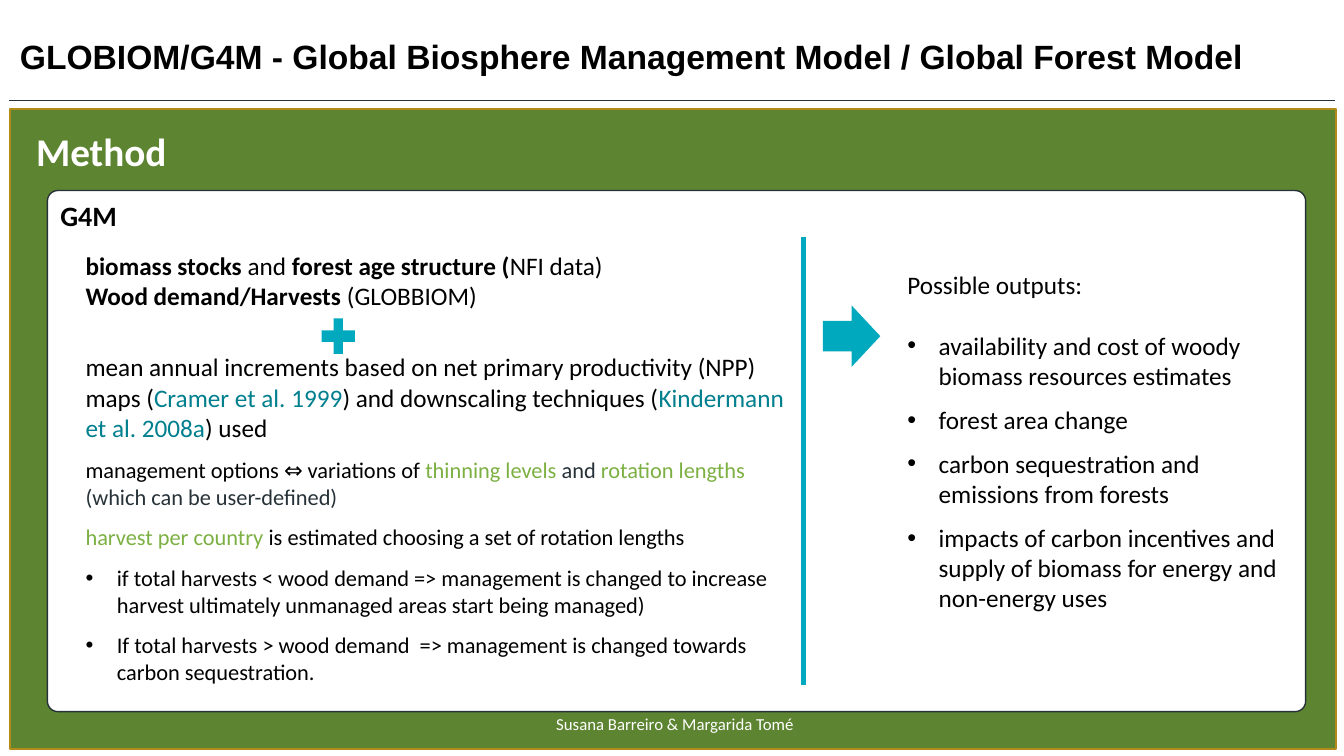
import pptx
import pptx.dml.color
import pptx.enum.shapes
import pptx.enum.text
import pptx.oxml.xmlchemy
import pptx.util

WIDTH = pptx.util.Inches(13.33)
HEIGHT = pptx.util.Inches(7.5)
BULLET_INDENT = 2.33

BLACK, WHITE, SLATE = "000000", "FFFFFF", "273238"
GREEN, GOLD, LIME = "5D8431", "B38B1B", "7CB042"
CYAN, TEAL = "00A9BE", "007F8E"

SHAPES = pptx.enum.shapes.MSO_SHAPE
ALIGN = pptx.enum.text.PP_ALIGN


def color(hex_string):
    return pptx.dml.color.RGBColor.from_string(hex_string)


def across(share):
    """Percent of the slide's width."""
    return round(WIDTH * share / 100)


def down(share):
    """Percent of the slide's height."""
    return round(HEIGHT * share / 100)


def box(left, top, width, height):
    return across(left), down(top), across(width), down(height)


def para(*runs, size=18, gap=0, bullet=False):
    """Describe a paragraph; each run is (text, color, bold)."""
    return {"runs": runs, "size": size, "gap": gap, "bullet": bullet}


def add_bullet(paragraph):
    properties = paragraph._p.get_or_add_pPr()
    properties.set("marL", str(across(BULLET_INDENT)))
    properties.set("indent", str(-across(BULLET_INDENT)))
    for tag, name, value in (("buFont", "typeface", "Arial"), ("buChar", "char", "•")):
        element = pptx.oxml.xmlchemy.OxmlElement("a:" + tag)
        element.set(name, value)
        properties.append(element)


def write(frame, paragraphs, font="Calibri", align=ALIGN.LEFT):
    frame.word_wrap = True
    frame.vertical_anchor = pptx.enum.text.MSO_ANCHOR.TOP
    for index, content in enumerate(paragraphs):
        paragraph = frame.add_paragraph() if index else frame.paragraphs[0]
        paragraph.alignment = align
        paragraph.space_before = pptx.util.Pt(content["gap"])
        if content["bullet"]:
            add_bullet(paragraph)
        for text, run_color, bold in content["runs"]:
            run = paragraph.add_run()
            run.text = text
            run.font.name = font
            run.font.size = pptx.util.Pt(content["size"])
            run.font.bold = bold
            run.font.color.rgb = color(run_color)


def add_text(slide, place, paragraphs, **style):
    write(slide.shapes.add_textbox(*box(*place)).text_frame, paragraphs, **style)


def add_block(slide, kind, place, fill, line=None, adjustment=None):
    shape = slide.shapes.add_shape(kind, *box(*place))
    shape.shadow.inherit = False
    shape.fill.solid()
    shape.fill.fore_color.rgb = color(fill)
    if line:
        shape.line.color.rgb = color(line)
        shape.line.width = pptx.util.Pt(1)
    else:
        shape.line.fill.background()
    if adjustment is not None:
        shape.adjustments[0] = adjustment
    return shape


def add_rule(slide, start, end, line, weight):
    rule = slide.shapes.add_connector(
        pptx.enum.shapes.MSO_CONNECTOR.STRAIGHT,
        across(start[0]), down(start[1]), across(end[0]), down(end[1]))
    rule.line.color.rgb = color(line)
    rule.line.width = pptx.util.Pt(weight)
    rule._element.spPr.append(pptx.oxml.xmlchemy.OxmlElement("a:effectLst"))


def add_frame(slide):
    """Title, green panel, footer and section heading."""
    add_rule(slide, (0.68, 13.33), (99.32, 13.33), SLATE, 0.5)
    title = "GLOBIOM/G4M - Global Biosphere Management Model / Global Forest Model"
    add_text(slide, (0.75, 4.13, 97.3, 6.67),
             [para((title, BLACK, True), size=24, gap=2)], font="Arial")
    add_block(slide, SHAPES.RECTANGLE, (0.75, 14.4, 98.65, 84.67), GREEN, GOLD)
    add_text(slide, (0.75, 93.73, 98.95, 4),
             [para(("Susana Barreiro & Margarida Tomé", WHITE, False), size=12)],
             align=ALIGN.CENTER)
    add_text(slide, (1.95, 16.13, 25.66, 7.6),
             [para(("Method", WHITE, True), size=28)])


def add_inputs(slide):
    add_text(slide, (5.63, 32.4, 41.56, 9.47), [
        para(("biomass stocks ", BLACK, True), ("and ", BLACK, False),
             ("forest age structure (", BLACK, True), ("NFI data)", BLACK, False)),
        para(("Wood demand/Harvests", BLACK, True), (" (GLOBBIOM)", BLACK, False)),
    ])


def add_process(slide):
    rules = (
        "if total harvests < wood demand => management is changed to increase "
        "harvest ultimately unmanaged areas start being managed)",
        "If total harvests > wood demand  => management is changed towards "
        "carbon sequestration.",
    )
    add_text(slide, (5.63, 45.87, 54.16, 47.6), [
        para(("mean annual increments based on net primary productivity (NPP) maps (",
              BLACK, False),
             ("Cramer et al. 1999", TEAL, False),
             (") and downscaling techniques (", BLACK, False),
             ("Kindermann et al. 2008a", TEAL, False), (") used", BLACK, False)),
        para(("management options ⇔ variations of ", BLACK, False),
             ("thinning levels ", LIME, False), ("and", SLATE, False),
             (" rotation lengths ", LIME, False),
             ("(which can be user-defined)", SLATE, False), size=16, gap=9.75),
        para(("harvest per country ", LIME, False),
             ("is estimated choosing a set of rotation lengths", BLACK, False),
             size=16, gap=9.75),
        *(para((rule, BLACK, False), size=16, gap=9.75, bullet=True) for rule in rules),
    ])


def add_outputs(slide):
    outputs = (
        "availability and cost of woody biomass resources estimates",
        "forest area change",
        "carbon sequestration and emissions from forests",
        "impacts of carbon incentives and supply of biomass for energy and "
        "non-energy uses",
    )
    add_text(slide, (66.77, 34.93, 29.03, 47.07), [
        para(("Possible outputs:", BLACK, False)),
        *(para((output, BLACK, False), gap=9.75 if index else 22, bullet=True)
          for index, output in enumerate(outputs)),
    ])


def main():
    presentation = pptx.Presentation()
    presentation.slide_width, presentation.slide_height = WIDTH, HEIGHT
    slide = presentation.slides.add_slide(presentation.slide_layouts[6])

    add_frame(slide)

    # Card with the model's inputs, process and outputs
    card = add_block(slide, SHAPES.ROUNDED_RECTANGLE, (3.53, 25.2, 93.62, 68.93),
                     WHITE, SLATE, 0.02)
    write(card.text_frame, [para(("G4M", BLACK, True), size=20)])
    add_inputs(slide)
    add_process(slide)
    add_outputs(slide)

    # Signs that join the parts
    add_block(slide, SHAPES.CROSS, (23.93, 42.13, 2.48, 4.67), CYAN, adjustment=0.36)
    add_block(slide, SHAPES.RIGHT_ARROW, (61.22, 40.4, 4.28, 8.13), CYAN)
    add_rule(slide, (59.79, 31.33), (59.79, 90.67), CYAN, 3)

    presentation.save("out.pptx")


if __name__ == "__main__":
    main()
